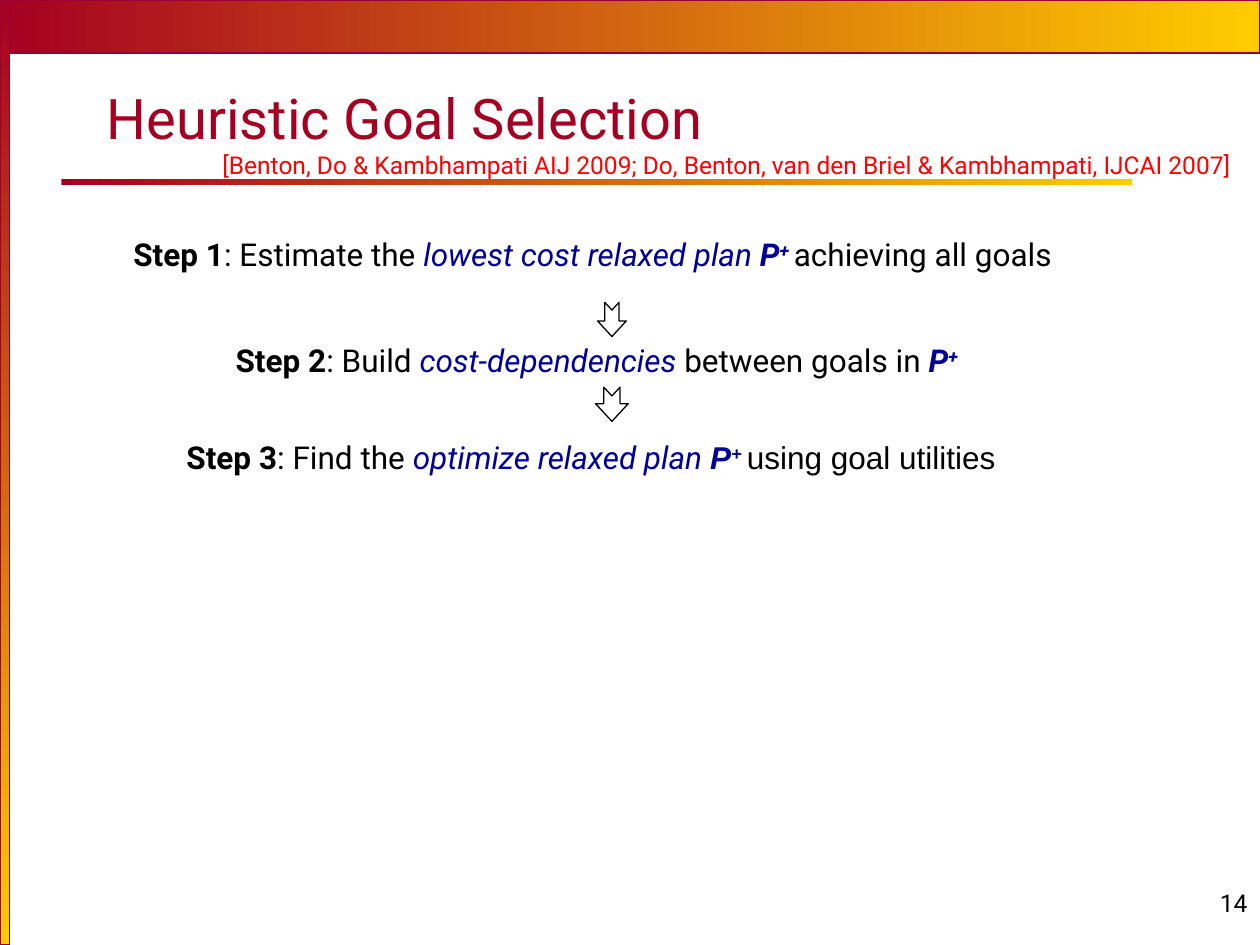
"""Build the slide on heuristic goal selection."""
from pptx import Presentation
from pptx.dml.color import RGBColor
from pptx.enum.shapes import MSO_SHAPE as Shape
from pptx.enum.text import MSO_ANCHOR as Anchor, MSO_AUTO_SIZE as Fit, PP_ALIGN as Align
from pptx.util import Cm, Pt

RED, GOLD, EDGE = "A50021", "FFCC00", "990033"
BLACK, BLUE, BRIGHT = "000000", "000099", "FF0000"
HEAD = {"bold": True}
TERM = {"color": BLUE, "italic": True}
PLAN = {**TERM, "bold": True}
PLUS = {**PLAN, "raise": 30}


def paint(text):
    return RGBColor.from_string(text)


class Deck:
    def __init__(self, wide, high):
        self.show = Presentation()
        self.show.slide_width, self.show.slide_height = Cm(wide), Cm(high)
        self.slide = self.show.slides.add_slide(self.show.slide_layouts[5])
        self.style = {"name": "Roboto", "size": Pt(18), "color": BLACK,
                      "bold": False, "italic": False}

    def fill_text(self, frame, runs, align=Align.LEFT, **base):
        para = frame.paragraphs[0]
        para.alignment = align
        for text, form in runs:
            run = para.add_run()
            run.text = text
            for key, value in {**self.style, **base, **form}.items():
                if key == "color":
                    run.font.color.rgb = paint(value)
                elif key == "raise":
                    run.font._element.set("baseline", str(value * 1000))
                else:
                    setattr(run.font, key, value)

    def title(self, box, text):
        shape = self.slide.shapes.title
        for key, value in zip(("left", "top", "width", "height"), box):
            setattr(shape, key, Cm(value))
        frame = shape.text_frame
        frame.vertical_anchor, frame.auto_size = Anchor.BOTTOM, Fit.NONE
        self.fill_text(frame, [(text, {})], size=Pt(32), color=RED)

    def text(self, box, runs, align=Align.LEFT, wrap=False, **base):
        frame = self.slide.shapes.add_textbox(*map(Cm, box)).text_frame
        frame.word_wrap = wrap
        frame.auto_size = Fit.NONE if wrap else Fit.SHAPE_TO_FIT_TEXT
        frame.vertical_anchor = Anchor.BOTTOM if wrap else Anchor.TOP
        self.fill_text(frame, runs, align, **base)

    def shape(self, kind, box, line=None):
        shape = self.slide.shapes.add_shape(kind, *map(Cm, box))
        shape.shadow.inherit = False
        if line:
            shape.line.color.rgb = paint(line)
            shape.line.width = Pt(0.75)
        else:
            shape.line.fill.background()
        return shape

    def bar(self, box, angle=0, line=None):
        fill = self.shape(Shape.RECTANGLE, box, line).fill
        fill.gradient()
        fill.gradient_angle = angle
        for stop, tone, place in zip(fill.gradient_stops, (RED, GOLD), (0, 1)):
            stop.color.rgb = paint(tone)
            stop.position = place

    def arrow(self, box):
        shape = self.shape(Shape.NOTCHED_RIGHT_ARROW, box, BLACK)
        shape.fill.background()
        shape.rotation = 90
        shape.adjustments[0], shape.adjustments[1] = 0.5, 0.54


def main():
    deck = Deck(25.4, 19.05)
    deck.bar((0, 0, 25.4, 1.07), line=EDGE)
    deck.bar((1.24, 3.61, 21.59, 0.13))
    deck.bar((0, 0, 0.2, 19.05), angle=270, line=EDGE)
    deck.title((1.9, 1.27, 21.64, 1.9), "Heuristic Goal Selection")
    deck.text((20.12, 17.35, 5.28, 1.27), [("14", {})], Align.RIGHT, True, size=Pt(14))

    steps = [
        ((2.44, 4.62, 19.89, 1.02), [
            (": Estimate the ", {}), ("lowest cost relaxed plan ", TERM),
            ("P", PLAN), ("+ ", PLUS), ("achieving all goals", {})]),
        ((4.5, 6.76, 15.77, 1.02), [
            (": Build ", {}), ("cost-dependencies", TERM),
            (" between goals in ", {}), ("P", PLAN), ("+", PLUS)]),
        ((3.51, 8.71, 17.65, 1.02), [
            (": Find the ", {}), ("optimize relaxed plan ", TERM),
            ("P", {**PLAN, "name": "Arial"}), ("+ ", {**PLUS, "name": "Arial"}),
            ("using goal utilities", {"name": "Arial"})]),
    ]
    for num, (box, runs) in enumerate(steps, 1):
        deck.text(box, [(f"Step {num}", HEAD), *runs])
    for top, high in ((6.15, 0.58), (7.82, 0.66)):
        deck.arrow((11.99, top, 0.69, high))

    cite = ("[Benton, Do & Kambhampati AIJ 2009; "
            "Do, Benton, van den Briel & Kambhampati, IJCAI 2007]")
    deck.text((3.91, 2.9, 21.49, 0.86), [(cite, {})], Align.CENTER,
              size=Pt(14), color=BRIGHT)
    deck.show.save("out.pptx")


if __name__ == "__main__":
    main()
